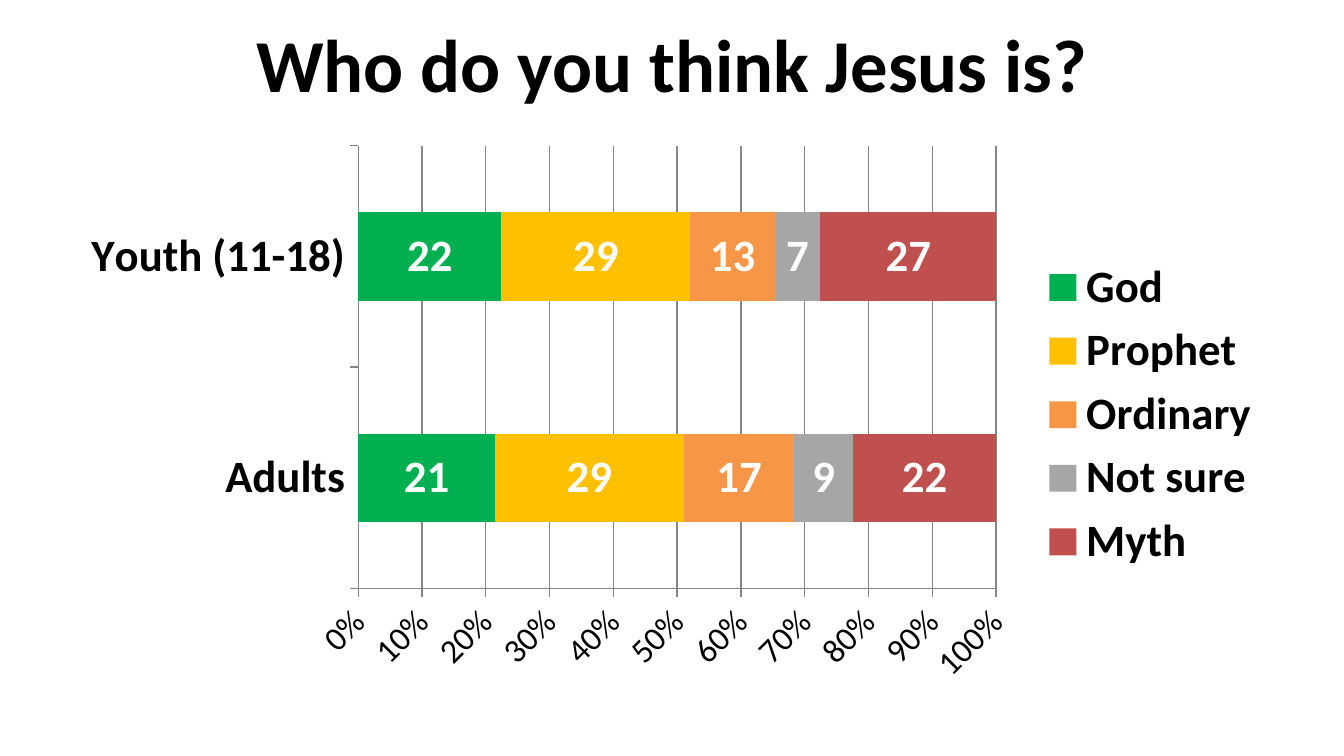
from dataclasses import dataclass

from pptx import Presentation
from pptx.chart.data import CategoryChartData
from pptx.dml.color import RGBColor
from pptx.enum.chart import XL_CHART_TYPE as ChartType
from pptx.enum.chart import XL_LEGEND_POSITION as LegendPosition
from pptx.enum.chart import XL_TICK_MARK as TickMark
from pptx.enum.text import MSO_ANCHOR as Anchor
from pptx.enum.text import PP_ALIGN as Align
from pptx.util import Cm, Pt


@dataclass(frozen=True)
class Theme:
    font: str = "Calibri"
    text: str = "000000"
    label: str = "FFFFFF"
    grid: str = "868686"
    title_size: int = 40
    chart_size: int = 24
    scale_size: int = 18


theme = Theme()


def style_font(font, size=theme.chart_size, color=theme.text, bold=True):
    font.name = theme.font
    font.size = Pt(size)
    font.bold = bold
    font.color.rgb = RGBColor.from_string(color)


def add_text(page, text, left, top, width, height, size, align):
    box = page.shapes.add_textbox(Cm(left), Cm(top), Cm(width), Cm(height))
    frame = box.text_frame
    frame.word_wrap = True
    frame.vertical_anchor = Anchor.MIDDLE
    para = frame.paragraphs[0]
    para.alignment = align
    span = para.add_run()
    span.text = text
    style_font(span.font, size=size)


deck = Presentation()
deck.slide_width, deck.slide_height = Cm(25.4), Cm(14.29)
page = deck.slides.add_slide(deck.slide_layouts[6])

# Title
add_text(page, "Who do you think Jesus is?", left=1.27, top=0, width=22.86,
         height=2.38, size=theme.title_size, align=Align.CENTER)

# Survey answers: name, (adults, youth), color
answers = [
    ("God", (21, 22), "00B050"),
    ("Prophet", (29, 29), "FFC000"),
    ("Ordinary", (17, 13), "F79646"),
    ("Not sure", (9, 7), "A6A6A6"),
    ("Myth", (22, 27), "C0504D"),
]
data = CategoryChartData()
data.categories = ["Adults", "Youth (11-18)"]
for name, values, color in answers:
    data.add_series(name, values)

# Stacked bar chart
chart = page.shapes.add_chart(ChartType.BAR_STACKED_100, Cm(1.27), Cm(2.54),
                              Cm(22.86), Cm(10.6), data).chart
style_font(chart.font, size=theme.scale_size, bold=False)
chart.has_title = False
plot = chart.plots[0]
plot.gap_width = 150
plot.overlap = 100
plot.vary_by_categories = False

for series, (name, values, color) in zip(plot.series, answers):
    series.format.fill.solid()
    series.format.fill.fore_color.rgb = RGBColor.from_string(color)
    labels = series.data_labels
    labels.show_value = True
    style_font(labels.font, color=theme.label)

# Axes
groups, scale = chart.category_axis, chart.value_axis
style_font(groups.tick_labels.font)
style_font(scale.tick_labels.font, size=theme.scale_size, bold=False)
scale.tick_labels.number_format = "0%"
scale.tick_labels.number_format_is_linked = False
scale.has_major_gridlines = True
for axis in (groups, scale):
    axis.major_tick_mark = TickMark.OUTSIDE
    axis.minor_tick_mark = TickMark.NONE
for part in (groups, scale, scale.major_gridlines):
    part.format.line.color.rgb = RGBColor.from_string(theme.grid)
    part.format.line.width = Pt(0.75)

# Legend
chart.has_legend = True
chart.legend.position = LegendPosition.RIGHT
chart.legend.include_in_layout = False
style_font(chart.legend.font)

deck.save("out.pptx")
